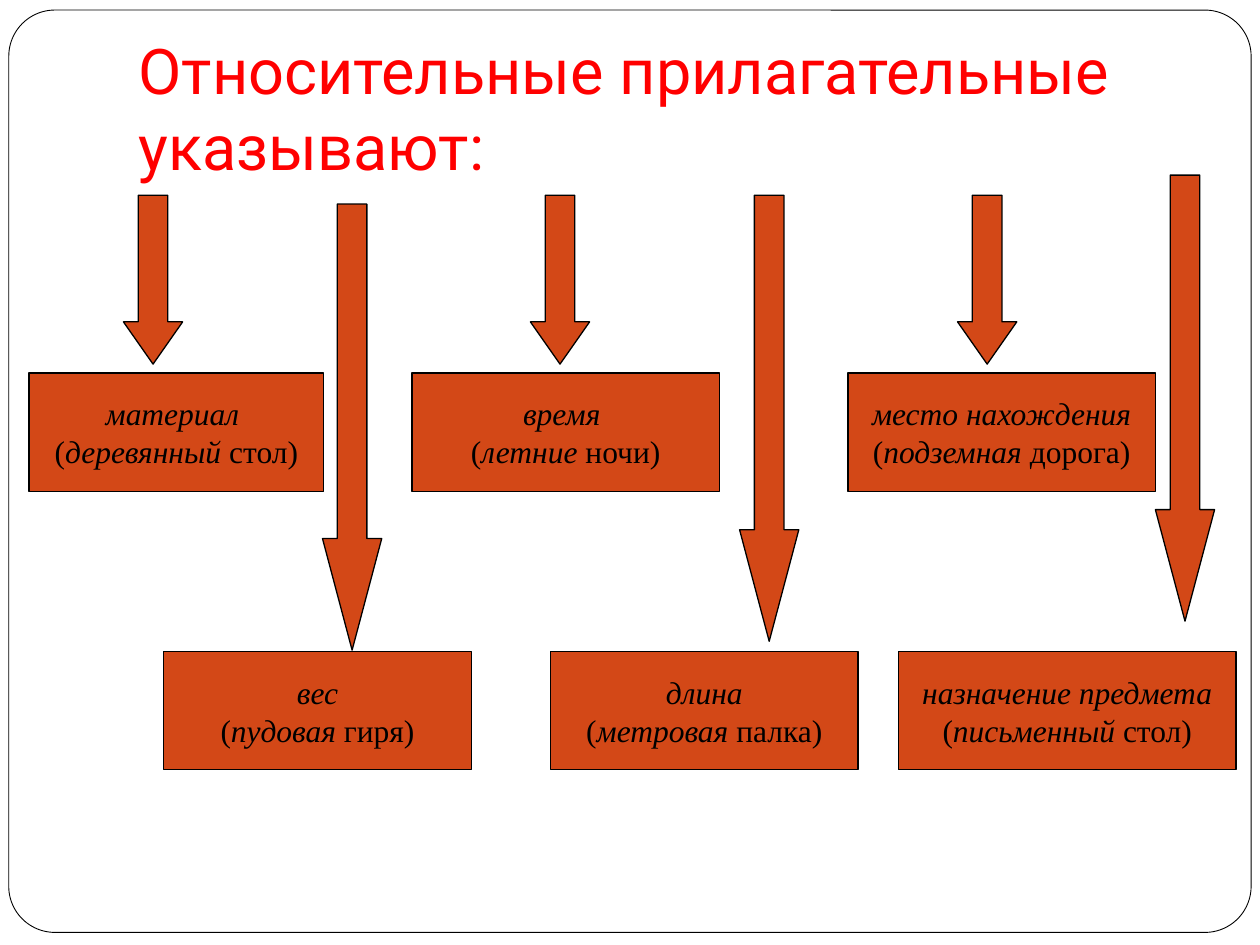
from dataclasses import dataclass

import pptx
import pptx.dml.color
import pptx.enum.shapes
import pptx.enum.text
import pptx.util

Pt = pptx.util.Pt
SHAPE = pptx.enum.shapes.MSO_SHAPE
ANCHOR = pptx.enum.text.MSO_ANCHOR
ALIGN = pptx.enum.text.PP_ALIGN

ORANGE = "D34817"
BLACK = "000000"
WHITE = "FFFFFF"
RED = "FF0000"
UPPER_ROW, LOWER_ROW = 213.12, 372.24
BOX_HEIGHT = 67.68
ARROW_WIDTH = 33.84
SHORT, LONG = 96.48, 254.88


@dataclass
class Box:
    left: float
    top: float
    width: float
    meaning: str
    adjective: str
    noun: str


@dataclass
class Arrow:
    left: float
    top: float
    height: float


BOXES = [
    Box(16.56, UPPER_ROW, 168.48, "материал ", "деревянный ", "стол"),
    Box(93.6, LOWER_ROW, 175.68, "вес", "пудовая", " гиря"),
    Box(314.64, LOWER_ROW, 175.68, "длина", "метровая", " палка"),
    Box(513.36, LOWER_ROW, 192.96, "назначение предмета", "письменный", " стол"),
    Box(235.44, UPPER_ROW, 175.68, "время ", "летние", " ночи"),
    Box(484.56, UPPER_ROW, 175.68, "место нахождения", "подземная", " дорога"),
]
ARROWS = [
    Arrow(70.56, 111.6, SHORT),
    Arrow(303.12, 111.6, SHORT),
    Arrow(547.2, 111.6, SHORT),
    Arrow(184.32, 116.64, LONG),
    Arrow(660.24, 100.08, LONG),
    Arrow(422.64, 111.6, LONG),
]


def rgb(color: str):
    return pptx.dml.color.RGBColor.from_string(color)


def add_text(p, text: str, *, size: float, font: str, color: str, italic: bool = False):
    r = p.add_run()
    r.text = text
    r.font.size = Pt(size)
    r.font.name = font
    r.font.color.rgb = rgb(color)
    r.font.italic = italic
    return r


def add_shape(s, kind, left: float, top: float, width: float, height: float,
              fill: str = ORANGE, weight: float = 0.75):
    sp = s.shapes.add_shape(kind, Pt(left), Pt(top), Pt(width), Pt(height))
    sp.shadow.inherit = False
    sp.fill.solid()
    sp.fill.fore_color.rgb = rgb(fill)
    sp.line.color.rgb = rgb(BLACK)
    sp.line.width = Pt(weight)
    return sp


def add_frame(s) -> None:
    sp = add_shape(s, SHAPE.ROUNDED_RECTANGLE, 5.04, 5.76, 709.92, 527.04, WHITE, 0.5)
    sp.adjustments[0] = 0.05
    s.shapes._spTree.insert(2, sp._element)


def add_title(s) -> None:
    sp = s.shapes.title
    sp.left, sp.top, sp.width, sp.height = Pt(72), Pt(21.6), Pt(612), Pt(90)
    tf = sp.text_frame
    tf.word_wrap = True
    tf.auto_size = pptx.enum.text.MSO_AUTO_SIZE.NONE
    tf.vertical_anchor = ANCHOR.BOTTOM
    tf.margin_bottom = Pt(7.2)
    p = tf.paragraphs[0]
    p.alignment = ALIGN.LEFT
    style = dict(size=36, font="Roboto", color=RED)
    add_text(p, "Относительные прилагательные", **style)
    p.add_line_break()
    add_text(p, "указывают:", **style)


def add_box(s, box: Box) -> None:
    sp = add_shape(s, SHAPE.RECTANGLE, box.left, box.top, box.width, BOX_HEIGHT)
    tf = sp.text_frame
    tf.word_wrap = False
    tf.vertical_anchor = ANCHOR.MIDDLE
    lines = [
        [(box.meaning, True)],
        [("(", False), (box.adjective, True), (box.noun + ")", False)],
    ]
    for i, line in enumerate(lines):
        p = tf.add_paragraph() if i else tf.paragraphs[0]
        p.alignment = ALIGN.CENTER
        for text, italic in line:
            add_text(p, text, size=18, font="Times New Roman", color=BLACK, italic=italic)


def add_arrow(s, arrow: Arrow) -> None:
    sp = add_shape(s, SHAPE.DOWN_ARROW, arrow.left, arrow.top, ARROW_WIDTH, arrow.height)
    sp.adjustments[0] = 0.5
    sp.adjustments[1] = arrow.height / ARROW_WIDTH / 4


def main() -> None:
    prs = pptx.Presentation()
    prs.slide_width, prs.slide_height = Pt(720), Pt(540)
    s = prs.slides.add_slide(prs.slide_layouts[5])
    add_frame(s)
    add_title(s)
    for box in BOXES:
        add_box(s, box)
    for arrow in ARROWS:
        add_arrow(s, arrow)
    prs.save("out.pptx")


if __name__ == "__main__":
    main()
